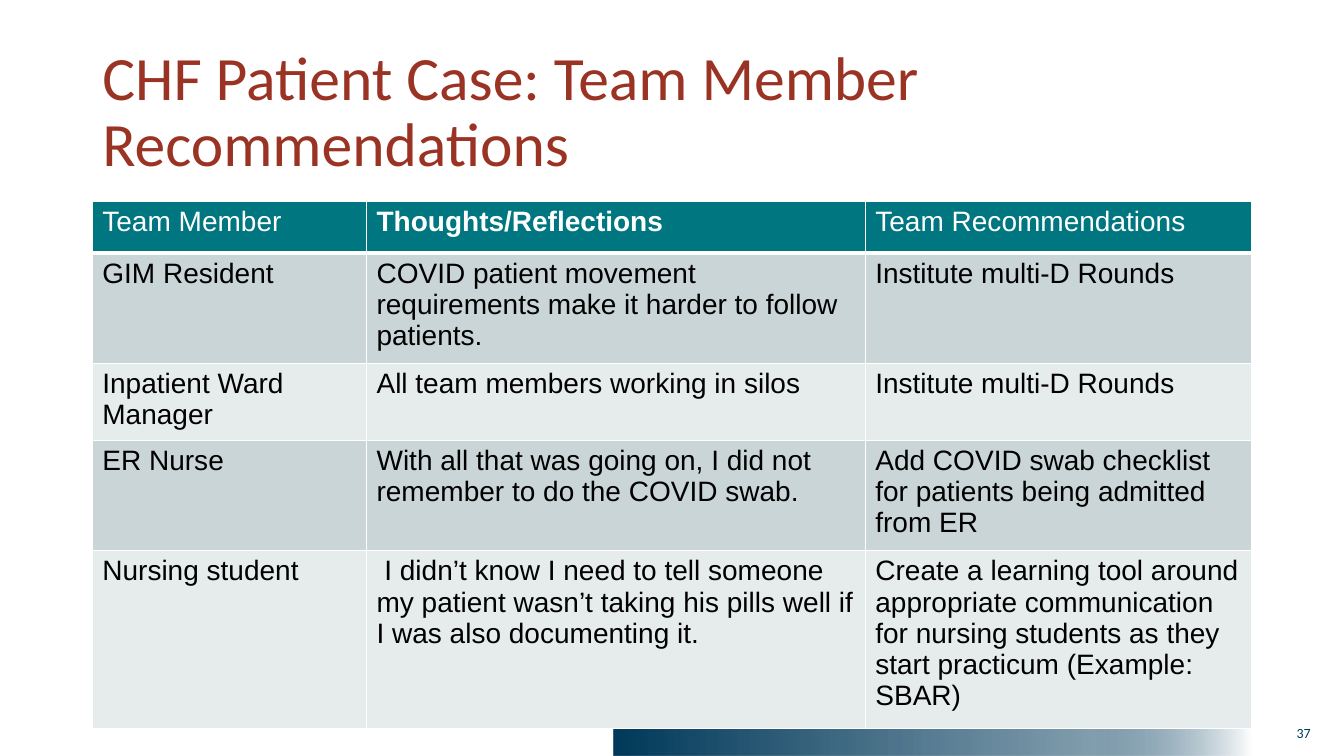
from lxml.etree import SubElement
from pptx import Presentation
from pptx.dml.color import RGBColor
from pptx.enum.shapes import MSO_SHAPE
from pptx.enum.text import MSO_ANCHOR, PP_ALIGN
from pptx.oxml.ns import qn
from pptx.util import Cm, Pt

WHITE = RGBColor(0xFF, 0xFF, 0xFF)
BLACK = RGBColor(0x00, 0x00, 0x00)
NAVY = RGBColor(0x00, 0x3A, 0x5B)
BRICK = RGBColor(0x9A, 0x33, 0x24)
TEAL = RGBColor(0x00, 0x76, 0x80)
DARK_BAND = RGBColor(0xCA, 0xD5, 0xD7)
LIGHT_BAND = RGBColor(0xE6, 0xEB, 0xEC)


def write_text(text_frame, text, *, size, color, font="Arial", bold=False,
               align=PP_ALIGN.LEFT, line_spacing=1.0):
    text_frame.word_wrap = True
    paragraph = text_frame.paragraphs[0]
    paragraph.alignment = align
    paragraph.line_spacing = line_spacing
    run = paragraph.add_run()
    run.text = text
    run.font.name = font
    run.font.size = Pt(size)
    run.font.bold = bold
    run.font.color.rgb = color


def add_color(parent, color, opacity=100):
    """Append a solid color, with its opacity in percent, to an XML element."""
    element = SubElement(parent, qn("a:srgbClr"), val=str(color))
    if opacity < 100:
        SubElement(element, qn("a:alpha"), val=str(opacity * 1000))


presentation = Presentation()
presentation.slide_width = Cm(33.87)
presentation.slide_height = Cm(19.05)
slide = presentation.slides.add_slide(presentation.slide_layouts[6])

# Footer band, fading from navy to white
footer_band = slide.shapes.add_shape(
    MSO_SHAPE.RECTANGLE, Cm(15.47), Cm(18.21), Cm(16.08), Cm(0.84))
footer_band.shadow.inherit = False
footer_band.line.fill.background()
footer_band.fill.gradient()
footer_band.fill.gradient_angle = 0
stop_list = next(footer_band.element.iter(qn("a:gsLst")))
for stop in list(stop_list):
    stop_list.remove(stop)
for position, color, opacity in [
        (0, NAVY, 100), (45, NAVY, 69), (75, NAVY, 49), (100, WHITE, 100)]:
    stop = SubElement(stop_list, qn("a:gs"), pos=str(position * 1000))
    add_color(stop, color, opacity)

# Title
title = slide.shapes.add_textbox(Cm(2.33), Cm(1.02), Cm(29.21), Cm(3.68))
title.text_frame.vertical_anchor = MSO_ANCHOR.MIDDLE
write_text(title.text_frame, "CHF Patient Case: Team Member Recommendations",
           size=44, color=BRICK, font="Calibri", line_spacing=0.9)

# Recommendations table
rows = [
    ("Team Member", "Thoughts/Reflections", "Team Recommendations"),
    ("GIM Resident",
     "COVID patient movement requirements make it harder to follow patients.",
     "Institute multi-D Rounds"),
    ("Inpatient Ward Manager",
     "All team members working in silos",
     "Institute multi-D Rounds"),
    ("ER Nurse",
     "With all that was going on, I did not remember to do the COVID swab.",
     "Add COVID swab checklist for patients being admitted from ER"),
    ("Nursing student",
     " I didn’t know I need to tell someone my patient wasn’t taking his pills "
     "well if I was also documenting it.",
     "Create a learning tool around appropriate communication for nursing "
     "students as they start practicum (Example: SBAR)"),
]
column_widths = [6.91, 12.57, 9.73]
row_heights = [1.3, 2.54, 1.77, 2.54, 4.12]

table = slide.shapes.add_table(
    len(rows), len(column_widths), Cm(2.33), Cm(5.08),
    Cm(sum(column_widths)), Cm(sum(row_heights))).table
for column, width in zip(table.columns, column_widths):
    column.width = Cm(width)
for row, height in zip(table.rows, row_heights):
    row.height = Cm(height)

for row_index, texts in enumerate(rows):
    is_header = row_index == 0
    if is_header:
        row_fill = TEAL
    else:
        row_fill = DARK_BAND if row_index % 2 else LIGHT_BAND
    for column_index, text in enumerate(texts):
        cell = table.cell(row_index, column_index)
        cell.margin_left = cell.margin_right = Cm(0.25)
        cell.margin_top = cell.margin_bottom = Cm(0.12)
        properties = cell._tc.get_or_add_tcPr()
        for side in ("L", "R", "T", "B"):
            below_header = (row_index, side) in [(0, "B"), (1, "T")]
            border = SubElement(properties, qn(f"a:ln{side}"),
                                w=str(Pt(3 if below_header else 1)))
            add_color(SubElement(border, qn("a:solidFill")), WHITE)
        cell.fill.solid()
        cell.fill.fore_color.rgb = row_fill
        write_text(cell.text_frame, text, size=20,
                   color=WHITE if is_header else BLACK,
                   bold=is_header and column_index == 1)

# Slide number
slide_number = slide.shapes.add_textbox(Cm(31.55), Cm(18.14), Cm(1.73), Cm(0.89))
write_text(slide_number.text_frame, "37", size=10, color=NAVY, font="Calibri",
           align=PP_ALIGN.RIGHT)

presentation.save("out.pptx")
